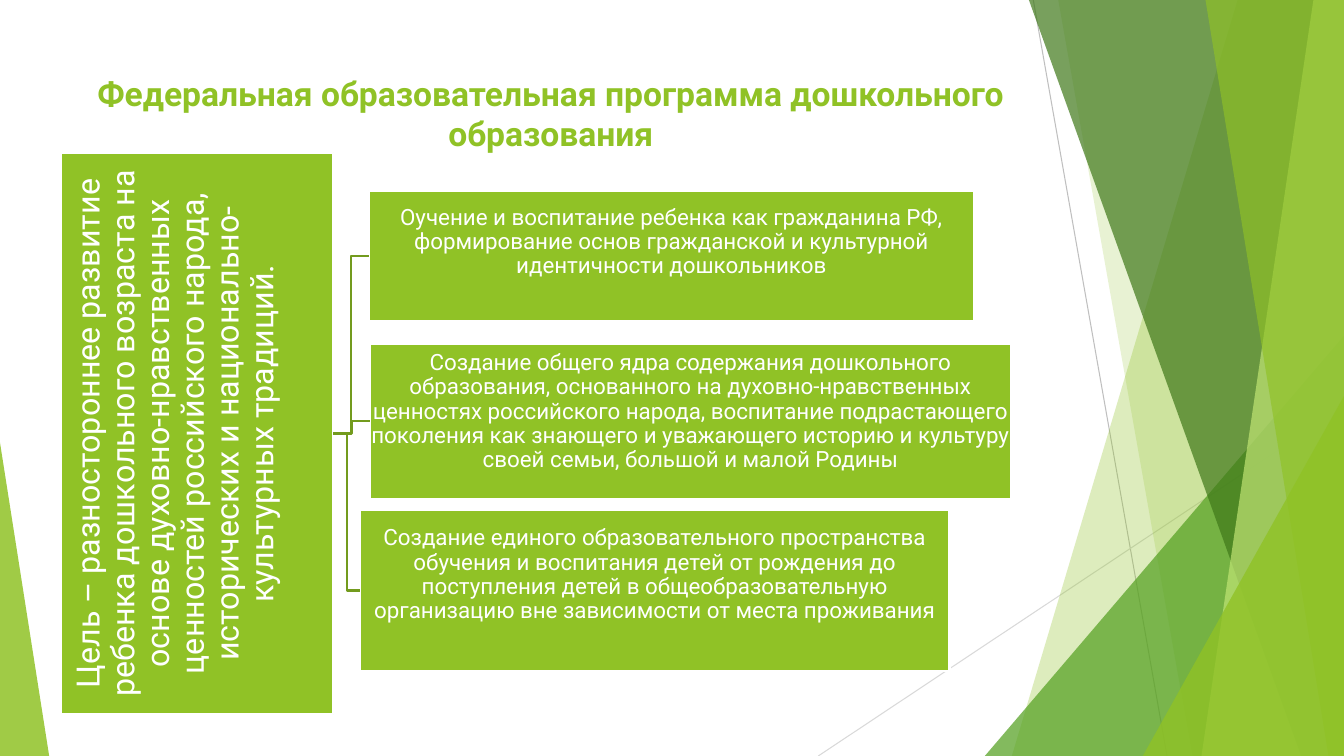
from dataclasses import dataclass

import pptx
import pptx.dml.color
import pptx.enum.shapes
import pptx.enum.text
import pptx.oxml
import pptx.oxml.ns
import pptx.util
from pptx.util import Cm

SHAPE = pptx.enum.shapes.MSO_SHAPE
WIDTH, HEIGHT = 33.87, 19.05


@dataclass(frozen=True)
class Theme:
    font: str = "Roboto"
    lime: str = "90C226"
    green: str = "54A021"
    forest: str = "3F7819"
    pale: str = "C0E474"
    link: str = "739B1E"
    white: str = "FFFFFF"
    gray: str = "BFBFBF"
    light_gray: str = "D9D9D9"
    title_size: float = 24
    goal_size: float = 23
    task_size: float = 16
    outline: float = 1.5
    hairline: float = 0.75


def rgb(color):
    return pptx.dml.color.RGBColor.from_string(color)


class SlideBuilder:
    def __init__(self, slide, theme):
        self.slide, self.theme = slide, theme
        self.shapes = slide.shapes

    def _tint(self, shape, color, opacity):
        """Fill a shape with a translucent colour and no outline."""
        shape.shadow.inherit = False
        shape.line.fill.background()
        shape.fill.solid()
        shape.fill.fore_color.rgb = rgb(color)
        clr = shape.fill._xPr.find(".//" + pptx.oxml.ns.qn("a:srgbClr"))
        alpha = pptx.oxml.parse_xml(
            f'<a:alpha {pptx.oxml.ns.nsdecls("a")} val="{opacity * 1000}"/>')
        clr.append(alpha)

    def _write(self, frame, text, size, color, bold=False):
        frame.word_wrap = True
        frame.auto_size = pptx.enum.text.MSO_AUTO_SIZE.NONE
        frame.text = text
        paragraph = frame.paragraphs[0]
        paragraph.alignment = pptx.enum.text.PP_ALIGN.CENTER
        font = paragraph.font
        font.name, font.size, font.bold = self.theme.font, pptx.util.Pt(size), bold
        font.color.rgb = rgb(color)
        return paragraph

    def title(self, text, left, top, width, height):
        title = self.shapes.title
        title.left, title.top = Cm(left), Cm(top)
        title.width, title.height = Cm(width), Cm(height)
        title.text_frame.vertical_anchor = pptx.enum.text.MSO_ANCHOR.TOP
        self._write(title.text_frame, text, self.theme.title_size,
                    self.theme.lime, bold=True)

    def band(self, top_x, bottom_x, color, opacity):
        """Draw a slanted band that reaches the right edge of the slide."""
        outline = self.shapes.build_freeform(Cm(top_x), 0)
        outline.add_line_segments([(Cm(WIDTH), 0), (Cm(WIDTH), Cm(HEIGHT)),
                                   (Cm(bottom_x), Cm(HEIGHT))])
        self._tint(outline.convert_to_shape(), color, opacity)

    def wedge(self, left, top, width, apex, color, opacity):
        """Draw a triangle that stands on the bottom edge of the slide."""
        wedge = self.shapes.add_shape(SHAPE.ISOSCELES_TRIANGLE, Cm(left), Cm(top),
                                      Cm(width), Cm(HEIGHT - top))
        wedge.adjustments[0] = apex
        self._tint(wedge, color, opacity)

    def _connector(self, kind, ends, color, width):
        link = self.shapes.add_connector(kind, *(Cm(value) for value in ends))
        link.line.color.rgb = rgb(color)
        link.line.width = pptx.util.Pt(width)
        link._element.spPr.append(pptx.oxml.parse_xml(
            f'<a:effectLst {pptx.oxml.ns.nsdecls("a")}/>'))
        return link

    def hairline(self, ends, color):
        self._connector(pptx.enum.shapes.MSO_CONNECTOR.STRAIGHT, ends, color,
                        self.theme.hairline)

    def branch(self, source, target):
        """Join the right side of one box to the left side of another."""
        link = self._connector(pptx.enum.shapes.MSO_CONNECTOR.ELBOW, (0, 0, 1, 1),
                               self.theme.link, self.theme.outline)
        link.begin_connect(source, 3)
        link.end_connect(target, 1)

    def box(self, text, left, top, width, height, size, lift, upward=False):
        """Draw a text box; lift is the extra margin after the last line."""
        box = self.shapes.add_shape(SHAPE.RECTANGLE, Cm(left), Cm(top),
                                    Cm(width), Cm(height))
        box.shadow.inherit = False
        box.fill.solid()
        box.fill.fore_color.rgb = rgb(self.theme.lime)
        box.line.color.rgb = rgb(self.theme.white)
        box.line.width = pptx.util.Pt(self.theme.outline)
        frame = box.text_frame
        frame.vertical_anchor = pptx.enum.text.MSO_ANCHOR.MIDDLE
        frame.margin_left = frame.margin_top = Cm(0.02)
        frame.margin_right = Cm(lift if upward else 0.02)
        frame.margin_bottom = Cm(0.02 if upward else lift)
        if upward:
            frame._txBody.bodyPr.set("vert", "vert270")
        self._write(frame, text, size, self.theme.white).line_spacing = 0.9
        return box


def main():
    deck = pptx.Presentation()
    deck.slide_width, deck.slide_height = Cm(WIDTH), Cm(HEIGHT)
    theme = Theme()
    page = SlideBuilder(deck.slides.add_slide(deck.slide_layouts[5]), theme)

    # Background facets
    page.hairline((26.04, 0, 29.41, HEIGHT), theme.gray)
    page.hairline((WIDTH, 10.24, 20.62, HEIGHT), theme.light_gray)
    page.band(31.19, 25.5, theme.lime, 30)
    page.band(26.67, 30.05, theme.lime, 20)
    page.wedge(24.82, 8.46, 9.05, 1, theme.green, 72)
    page.band(25.93, 32.79, theme.forest, 70)
    page.band(33.1, 30.28, theme.pale, 70)
    page.band(30.38, 33.48, theme.lime, 65)
    page.wedge(28.8, 9.98, 5.07, 1, theme.lime, 80)
    page.wedge(0, 11.15, 1.24, 0, theme.lime, 85)

    # Title
    page.title("Федеральная образовательная программа дошкольного образования",
               1.88, 1.7, 24, 2)

    # Goal
    goal = page.box(
        "Цель – разностороннее развитие ребенка дошкольного возраста на основе "
        "духовно-нравственных ценностей российского народа, исторических и "
        "национально-культурных традиций.",
        1.54, 3.85, 6.86, 14.15, theme.goal_size, lift=1.08, upward=True)

    # Tasks that follow from the goal: text, left, top, width, height, lift
    tasks = [
        ("Оучение и воспитание ребенка как гражданина РФ, формирование основ "
         "гражданской и культурной идентичности дошкольников",
         9.3, 4.81, 15.24, 3.27, 0.71),
        ("Создание общего ядра содержания дошкольного образования, основанного на "
         "духовно-нравственных ценностях российского народа, воспитание "
         "подрастающего поколения как знающего и уважающего историю и культуру "
         "своей семьи, большой и малой Родины",
         9.32, 8.67, 16.16, 3.9, 0.5),
        ("Создание единого образовательного пространства обучения и воспитания "
         "детей от рождения до поступления детей в общеобразовательную "
         "организацию вне зависимости от места проживания",
         9.07, 12.86, 14.86, 4.04, 0.8),
    ]
    for text, left, top, width, height, lift in tasks:
        task = page.box(text, left, top, width, height, theme.task_size, lift)
        page.branch(goal, task)

    deck.save("out.pptx")


if __name__ == "__main__":
    main()
